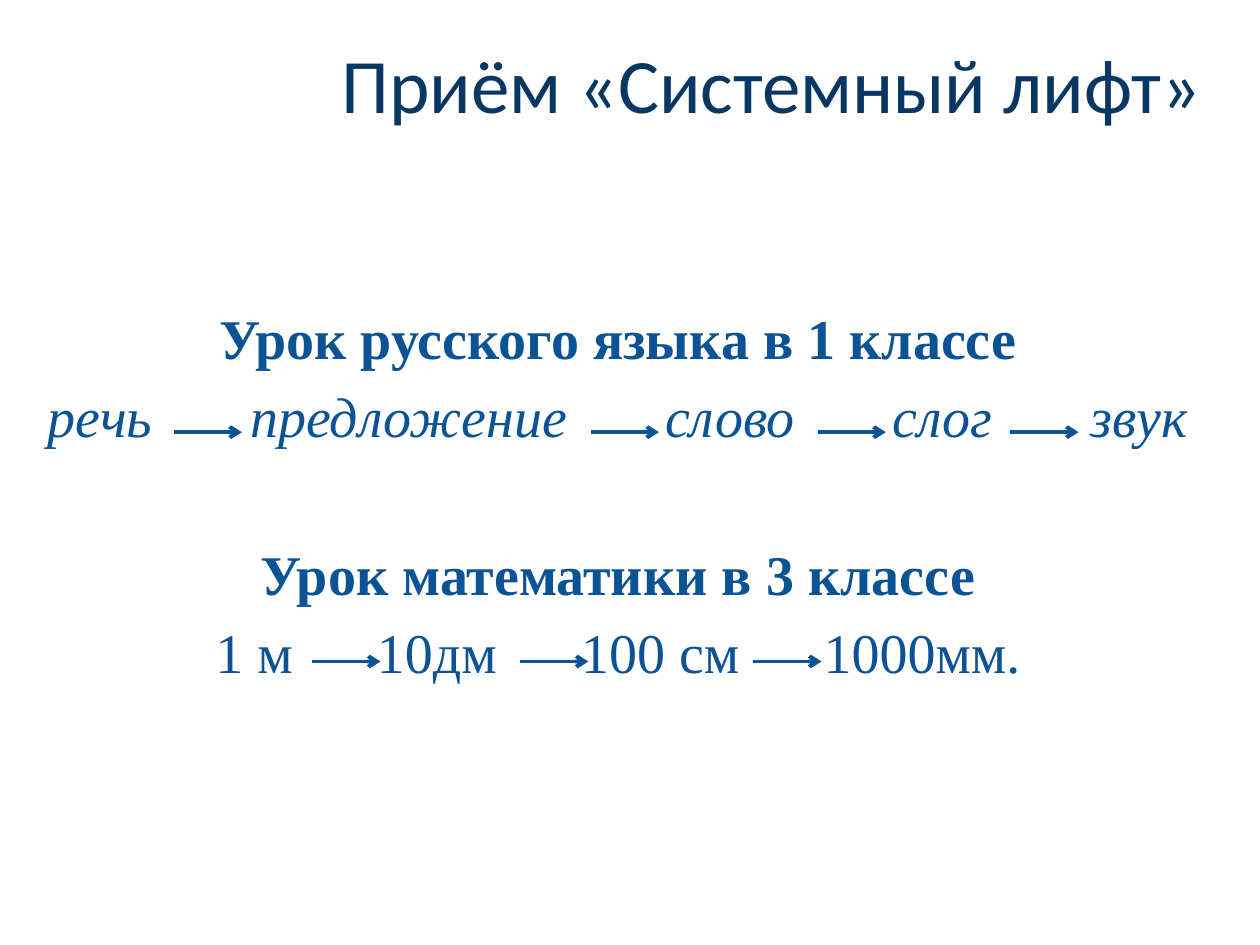
from dataclasses import dataclass

from lxml import etree
from pptx import Presentation
from pptx import util as u
from pptx.dml.color import RGBColor
from pptx.enum import shapes, text
from pptx.oxml import ns


@dataclass(frozen=True)
class Theme:
    navy: RGBColor = RGBColor(0x08, 0x37, 0x63)
    blue: RGBColor = RGBColor(0x0B, 0x53, 0x94)
    head: str = "Calibri"
    serif: str = "Times New Roman"
    big: int = 44
    size: int = 32
    line: float = 2.25


@dataclass(frozen=True)
class Chain:
    title: str
    words: tuple[str, ...]
    room: int                  # points added to the space between words
    arrows: tuple[float, ...]  # arrow starts
    y: float
    italic: bool
    gap: float                 # points above the heading


THEME = Theme()
REACH = 0.54
CHAINS = (
    Chain("Урок русского языка в 1 классе",
          ("речь", "предложение", "слово", "слог", "звук"), 48,
          (1.38, 4.69, 6.49, 8.02), 3.43, True, 0),
    Chain("Урок математики в 3 классе",
          ("1 м", "10дм", "100 см", "1000мм."), 40,
          (2.48, 4.13, 5.98), 5.25, False, 52),
)


def place(shape, x: float, y: float, w: float, h: float) -> None:
    shape.left, shape.top = u.Inches(x), u.Inches(y)
    shape.width, shape.height = u.Inches(w), u.Inches(h)


def add_line(frame, words: tuple[str, ...], gap: float, room: int = 0,
             bold: bool = False, italic: bool = False) -> None:
    """Add one centred, unbulleted line, its words set apart by wide spaces."""
    first = frame.paragraphs[0]
    para = frame.add_paragraph() if first.runs else first
    prop = para._p.get_or_add_pPr()
    prop.set("marL", "0")
    prop.set("indent", "0")
    etree.SubElement(prop, ns.qn("a:buNone"))
    for i, word in enumerate(words):
        if i:
            space = para.add_run()
            space.text = " "
            space._r.get_or_add_rPr().set("spc", str(room * 100))
        para.add_run().text = word
    para.alignment = text.PP_ALIGN.CENTER
    para.space_before = u.Pt(gap)
    font = para.font
    font.name, font.size = THEME.serif, u.Pt(THEME.size)
    font.bold, font.italic = bold, italic
    font.color.rgb = THEME.blue


def add_arrow(slide, x: float, y: float) -> None:
    link = slide.shapes.add_connector(
        shapes.MSO_CONNECTOR.STRAIGHT,
        u.Inches(x), u.Inches(y), u.Inches(x + REACH), u.Inches(y))
    link.line.color.rgb = THEME.blue
    link.line.width = u.Pt(THEME.line)
    etree.SubElement(link.line._get_or_add_ln(), ns.qn("a:tailEnd"), type="arrow")
    etree.SubElement(link._element.spPr, ns.qn("a:effectLst"))


def main() -> None:
    deck = Presentation()
    deck.slide_width, deck.slide_height = u.Inches(10), u.Inches(7.5)
    slide = deck.slides.add_slide(deck.slide_layouts[1])

    # Title
    title = slide.shapes.title
    place(title, 2.58, 0.24, 7.09, 0.84)
    frame = title.text_frame
    frame.text = "Приём «Системный лифт»"
    frame.word_wrap = False
    frame.auto_size = text.MSO_AUTO_SIZE.NONE
    para = frame.paragraphs[0]
    para.alignment = text.PP_ALIGN.CENTER
    para.font.name, para.font.size = THEME.head, u.Pt(THEME.big)
    para.font.color.rgb = THEME.navy

    # Lessons: a heading and a chain of words each
    body = slide.placeholders[1]
    place(body, 0.14, 1.73, 9.53, 5.45)
    frame = body.text_frame
    frame.auto_size = text.MSO_AUTO_SIZE.NONE
    frame.margin_top = u.Inches(0.68)
    for chain in CHAINS:
        add_line(frame, (chain.title,), chain.gap, bold=True)
        add_line(frame, chain.words, 6, chain.room, italic=chain.italic)

    # Arrows between the words
    for chain in CHAINS:
        for x in chain.arrows:
            add_arrow(slide, x, chain.y)

    deck.save("out.pptx")


if __name__ == "__main__":
    main()
